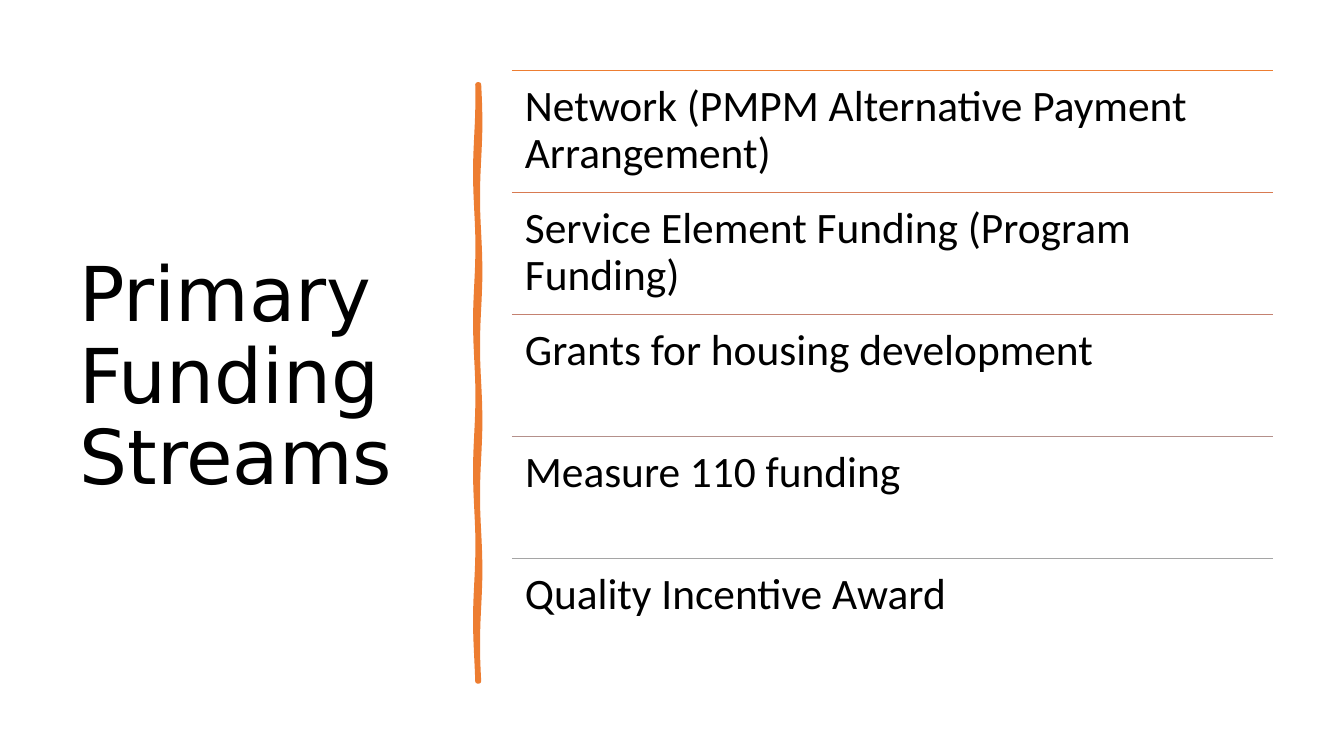
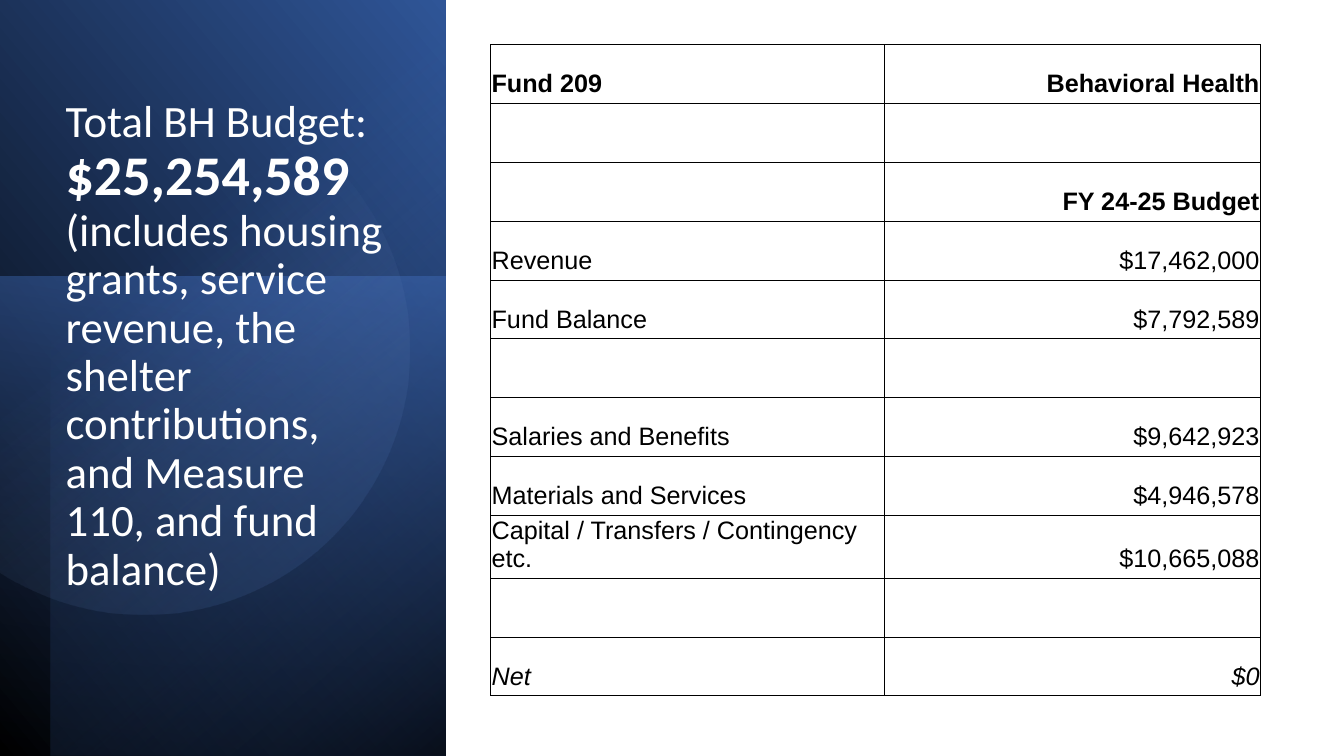
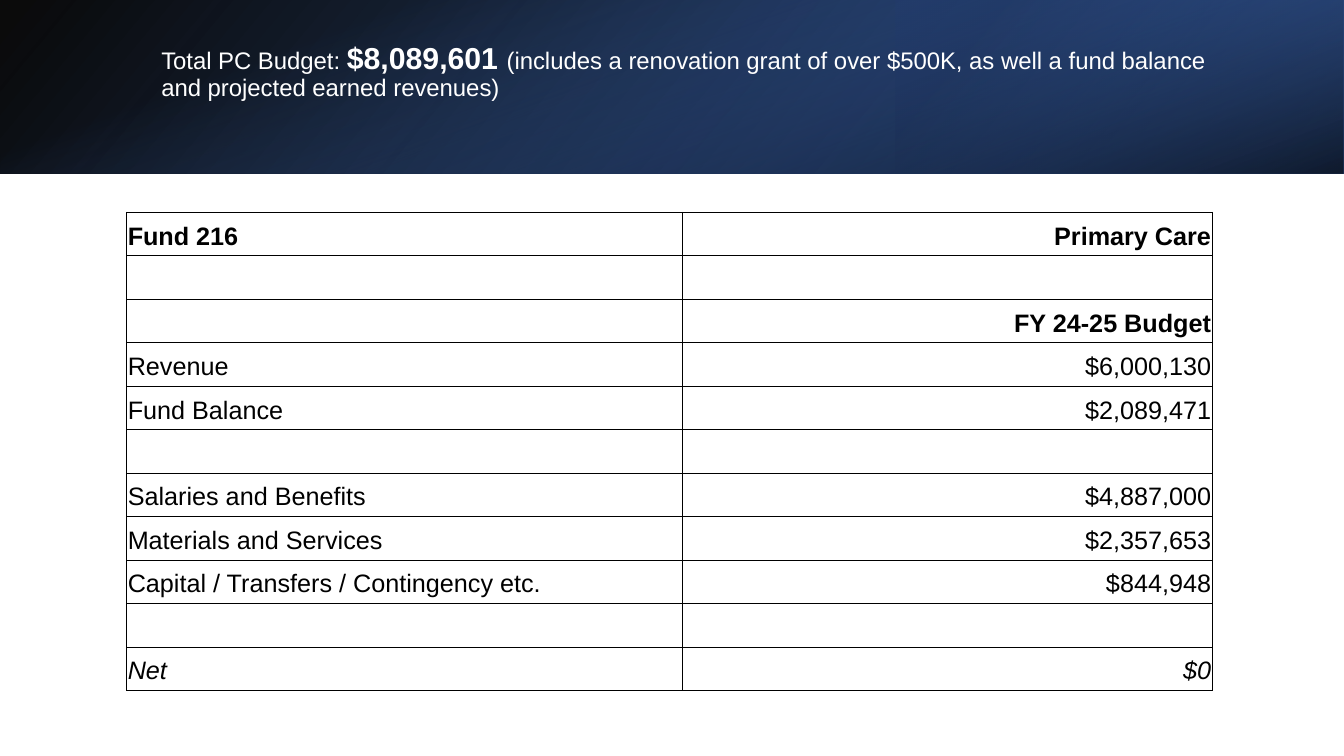
from collections import namedtuple
from math import acos, cos, pi, sin

from lxml.etree import SubElement
from pptx import Presentation
from pptx.dml.color import RGBColor
from pptx.enum.shapes import MSO_CONNECTOR, MSO_SHAPE
from pptx.enum.text import MSO_ANCHOR as ANCHOR, MSO_AUTO_SIZE, PP_ALIGN as ALIGN
from pptx.oxml.ns import qn
from pptx.util import Cm, Pt

Box = namedtuple("Box", "left top width height")
Stop = namedtuple("Stop", "position color opacity", defaults=(100,))

BLACK = RGBColor(0x00, 0x00, 0x00)
WHITE = RGBColor(0xFF, 0xFF, 0xFF)
ORANGE = RGBColor(0xED, 0x7D, 0x31)
BLUE = RGBColor(0x44, 0x72, 0xC4)
MID_BLUE = RGBColor(0x2F, 0x55, 0x97)
NAVY = RGBColor(0x20, 0x38, 0x64)
PALE_BLUE = RGBColor(0x8F, 0xAA, 0xDC)

SLIDE = Box(0, 0, 33.87, 19.05)
TITLE_ONLY = 5
LINE_SPACING = 0.9

STREAMS = [
    ("Network (PMPM Alternative Payment Arrangement)", ORANGE),
    ("Service Element Funding (Program Funding)", RGBColor(0xD8, 0x7A, 0x51)),
    ("Grants for housing development", RGBColor(0xC4, 0x81, 0x70)),
    ("Measure 110 funding", RGBColor(0xB4, 0x90, 0x8B)),
    ("Quality Incentive Award", RGBColor(0xA5, 0xA5, 0xA5)),
]


def lengths(box):
    return [Cm(value) for value in box]


def write_run(paragraph, text, **font_values):
    run = paragraph.add_run()
    run.text = text
    color = font_values.pop("color", BLACK)
    for name, value in font_values.items():
        setattr(run.font, name, value)
    run.font.color.rgb = color


def add_titled_slide(prs):
    return prs.slides.add_slide(prs.slide_layouts[TITLE_ONLY])


def set_title(slide, box, runs, anchor):
    """Place the title in front of what is already drawn; runs are (text, font values)."""
    title = slide.shapes.title
    slide.shapes.element.append(title.element)
    title.left, title.top, title.width, title.height = lengths(box)
    frame = title.text_frame
    frame.auto_size = MSO_AUTO_SIZE.NONE
    frame.word_wrap = True
    frame.vertical_anchor = anchor
    paragraph = frame.paragraphs[0]
    paragraph.alignment = ALIGN.LEFT
    paragraph.line_spacing = LINE_SPACING
    for text, font_values in runs:
        write_run(paragraph, text, **font_values)


def add_outline(slide, points):
    """Add a closed polygon through points given in centimetres."""
    corners = [(Cm(x), Cm(y)) for x, y in points]
    builder = slide.shapes.build_freeform(*corners[0])
    builder.add_line_segments(corners[1:], close=True)
    shape = builder.convert_to_shape()
    shape.shadow.inherit = False
    return shape


def fill_gradient(shape, stops, angle):
    """Fill with a two-stop gradient; the angle runs clockwise in degrees."""
    shape.line.fill.background()
    fill = shape.fill
    fill.gradient()
    fill.gradient_angle = 360 - angle
    for target, stop in zip(fill.gradient_stops, stops):
        target.position = stop.position / 100
        target.color.rgb = stop.color
    colors = shape.element.spPr.iter(qn("a:srgbClr"))
    for color, stop in zip(colors, stops):
        SubElement(color, qn("a:alpha"), val=str(stop.opacity * 1000))


def add_gradient_layer(slide, box, stops, angle, rotation=0, flipped=False):
    """Cover the box with a gradient whose rectangle is turned by rotation."""
    left, top, width, height = box
    if rotation % 180:
        left, top = left + (width - height) / 2, top + (height - width) / 2
        width, height = height, width
    layer = slide.shapes.add_shape(
        MSO_SHAPE.RECTANGLE, *lengths((left, top, width, height)))
    layer.shadow.inherit = False
    layer.rotation = rotation
    if flipped:
        layer.element.spPr.xfrm.set("flipH", "1")
    fill_gradient(layer, stops, angle)


def add_brush_stroke(slide, box):
    """Draw a slightly wavy vertical stroke filling the box."""
    steps = 60
    wave = 0.03

    def edge(x, phase):
        return [(x + wave * sin(8 * pi * i / steps + phase),
                 box.top + box.height * i / steps) for i in range(steps + 1)]

    right_edge = edge(box.left + box.width, 0)
    left_edge = edge(box.left, 1)
    stroke = add_outline(slide, right_edge + left_edge[::-1])
    stroke.fill.solid()
    stroke.fill.fore_color.rgb = ORANGE
    stroke.line.color.rgb = ORANGE
    stroke.line.width = Pt(3.25)


def add_ruled_list(slide, box, entries):
    pitch = box.height / len(entries)
    for i, (text, color) in enumerate(entries):
        top = box.top + i * pitch
        rule = slide.shapes.add_connector(
            MSO_CONNECTOR.STRAIGHT,
            *lengths((box.left, top, box.left + box.width, top)))
        rule.line.color.rgb = color
        rule.line.width = Pt(1)
        SubElement(rule.element.spPr, qn("a:effectLst"))

        entry = slide.shapes.add_textbox(*lengths((box.left, top, box.width, pitch)))
        frame = entry.text_frame
        frame.word_wrap = True
        for side in ("left", "top", "right", "bottom"):
            setattr(frame, f"margin_{side}", Cm(0.33))
        paragraph = frame.paragraphs[0]
        paragraph.line_spacing = LINE_SPACING
        write_run(paragraph, text, name="Calibri", size=Pt(31))


def add_disc(slide, center_x, center_y, radius):
    """Draw a disc cut off by the left edge of the slide."""
    steps = 120
    limit = acos(-center_x / radius)
    angles = [limit * (2 * i / steps - 1) for i in range(steps + 1)]
    disc = add_outline(slide, [(center_x + radius * cos(a), center_y + radius * sin(a))
                               for a in angles])
    fill_gradient(disc, [Stop(39, PALE_BLUE, 0), Stop(100, MID_BLUE, 26)], 52)


def add_side_panel(slide, box):
    left, top, width, height = box
    lower_top, inset = 6.96, 1.27
    add_gradient_layer(slide, box, [Stop(0, BLACK), Stop(100, MID_BLUE)], 310, 90, True)
    add_gradient_layer(
        slide, Box(left, top + lower_top, width, height - lower_top),
        [Stop(0, BLUE, 50), Stop(100, NAVY, 0)], 190, 270)
    add_gradient_layer(
        slide, Box(left + inset, top, width - inset, height),
        [Stop(0, BLACK, 59), Stop(69, BLUE, 0)], 220, 270, True)
    add_disc(slide, left + 3.63, top + 8.81, 6.68)


def add_top_banner(slide, box):
    third = box.width / 3
    add_gradient_layer(slide, box, [Stop(0, BLACK, 96), Stop(100, MID_BLUE)], 140,
                       flipped=True)
    add_gradient_layer(
        slide, Box(box.left + 2 * third, box.top, third, box.height),
        [Stop(19, NAVY, 68), Stop(100, BLUE, 79)], 320, 180, True)
    add_gradient_layer(slide, box, [Stop(23, BLUE, 0), Stop(99, BLACK, 74)], 340, 90)


def budget_rows(fund, department, revenue, balance, salaries, materials, capital):
    """Return (label, amount, font values) for each row of a fund's budget."""
    bold, italic = {"bold": True}, {"italic": True}
    blank = ("", "", {})
    return [
        (fund, department, bold),
        blank,
        ("", "FY 24-25 Budget", bold),
        ("Revenue", revenue, {}),
        ("Fund Balance", balance, {}),
        blank,
        ("Salaries and Benefits", salaries, {}),
        ("Materials and Services", materials, {}),
        ("Capital / Transfers / Contingency etc.", capital, {}),
        blank,
        ("Net", "$0", italic),
    ]


def draw_borders(cell):
    properties = cell._tc.get_or_add_tcPr()
    for i, side in enumerate(("lnL", "lnR", "lnT", "lnB")):
        border = SubElement(properties, qn(f"a:{side}"), w=str(Pt(0.5)))
        fill = SubElement(border, qn("a:solidFill"))
        SubElement(fill, qn("a:srgbClr"), val=str(BLACK))
        properties.insert(i, border)


def format_cell(cell, text, alignment, font_values):
    margins = {"margin_left": 0.03, "margin_top": 0.03,
               "margin_right": 0.03, "margin_bottom": 0.13}
    for name, value in margins.items():
        setattr(cell, name, Cm(value))
    cell.vertical_anchor = ANCHOR.BOTTOM
    cell.fill.background()
    draw_borders(cell)
    paragraph = cell.text_frame.paragraphs[0]
    paragraph.alignment = alignment
    paragraph.font.size = Pt(18)
    if text:
        write_run(paragraph, text, name="Arial", size=Pt(18), **font_values)


def add_budget_table(slide, box, label_width, rows):
    table = slide.shapes.add_table(len(rows), 2, *lengths(box)).table
    table.first_row = table.horz_banding = False
    table.columns[0].width = Cm(label_width)
    table.columns[1].width = Cm(box.width - label_width)
    for i, (label, amount, font_values) in enumerate(rows):
        table.rows[i].height = Cm(box.height / len(rows))
        format_cell(table.cell(i, 0), label, ALIGN.LEFT, font_values)
        format_cell(table.cell(i, 1), amount, ALIGN.RIGHT, font_values)


def build_funding_streams(prs):
    slide = add_titled_slide(prs)
    set_title(slide, Box(1.75, 1.78, 9.5, 15.52),
              [("Primary Funding Streams", {"name": "DejaVu Sans", "size": Pt(54)})],
              ANCHOR.MIDDLE)
    add_brush_stroke(slide, Box(12.01, 2.13, 0.06, 15.04))
    add_ruled_list(slide, Box(12.9, 1.78, 19.18, 15.37), STREAMS)


def build_behavioral_health(prs):
    slide = add_titled_slide(prs)
    add_side_panel(slide, Box(0, 0, 11.23, SLIDE.height))
    body = {"name": "Calibri", "size": Pt(32), "color": WHITE}
    total = {**body, "size": Pt(40), "bold": True}
    set_title(slide, Box(1.4, 2.36, 8.69, 12.73), [
        ("Total BH Budget: ", body),
        ("$25,254,589", total),
        (" (includes housing grants, service revenue, the shelter contributions, "
         "and Measure 110, and fund balance)", body),
    ], ANCHOR.TOP)
    add_budget_table(slide, Box(12.36, 1.12, 19.41, 16.32), 9.93, budget_rows(
        "Fund 209", "Behavioral Health", "$17,462,000", "$7,792,589",
        "$9,642,923", "$4,946,578", "$10,665,088"))


def build_primary_care(prs):
    slide = add_titled_slide(prs)
    add_top_banner(slide, Box(0, 0, SLIDE.width, 4.37))
    body = {"name": "Arial", "size": Pt(17.1), "color": WHITE}
    total = {**body, "size": Pt(21.6), "bold": True}
    set_title(slide, Box(3.81, 0.97, 27.89, 2.44), [
        ("Total PC Budget: ", body),
        ("$8,089,601 ", total),
        ("(includes a renovation grant of over $500K, as well a fund balance "
         "and projected earned revenues)", body),
    ], ANCHOR.TOP)
    add_budget_table(slide, Box(3.19, 5.35, 27.36, 12.05), 14, budget_rows(
        "Fund 216", "Primary Care", "$6,000,130", "$2,089,471",
        "$4,887,000", "$2,357,653", "$844,948"))


def main():
    prs = Presentation()
    prs.slide_width, prs.slide_height = Cm(SLIDE.width), Cm(SLIDE.height)
    build_funding_streams(prs)
    build_behavioral_health(prs)
    build_primary_care(prs)
    prs.save("out.pptx")


if __name__ == "__main__":
    main()
